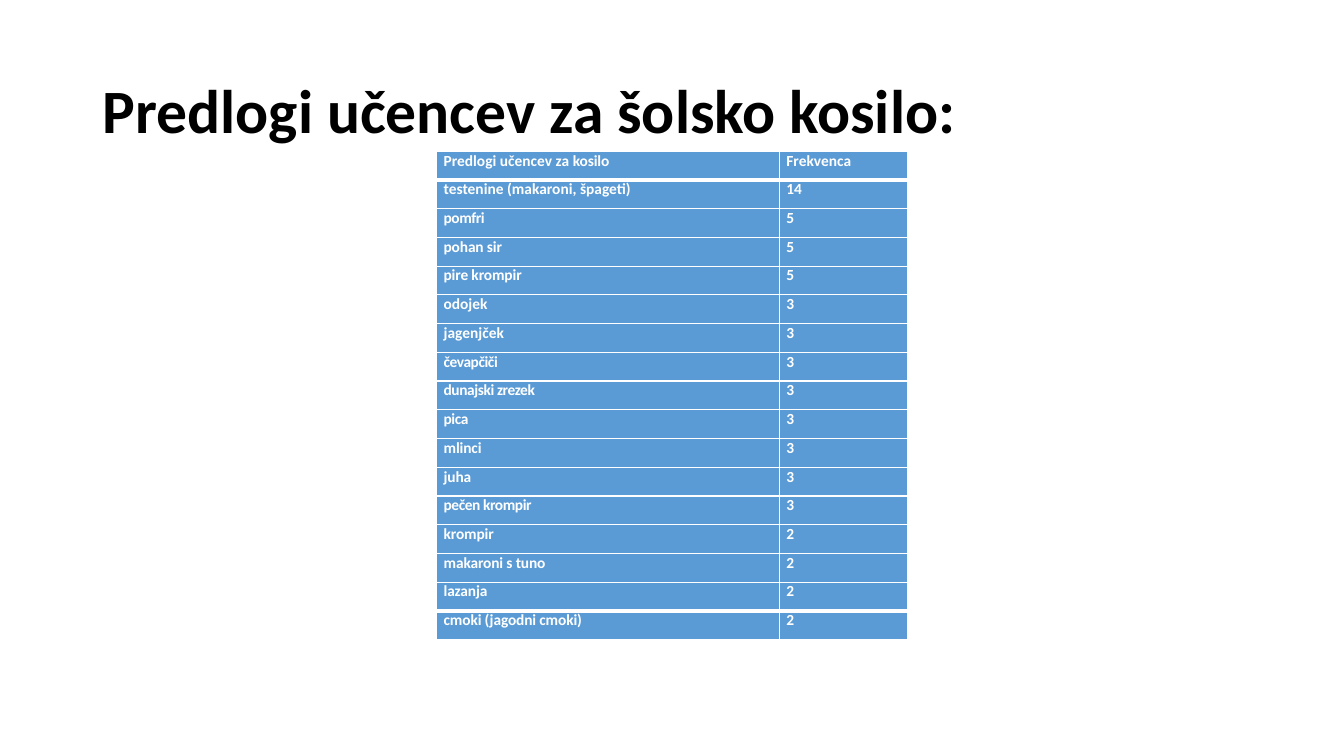
from dataclasses import dataclass

from lxml.etree import fromstring
from pptx import Presentation
from pptx.dml.color import RGBColor
from pptx.enum.text import MSO_ANCHOR
from pptx.util import Inches, Pt


@dataclass(frozen=True)
class Theme:
    font: str = "Calibri"
    title_size: float = 44
    table_size: float = 11
    title_color: str = "000000"
    table_text: str = "FFFFFF"
    cell_fill: str = "5B9BD5"
    rule_color: str = "FFFFFF"
    thin_rule: int = 1
    thick_rule: int = 3


THEME = Theme()
SLIDE_W, SLIDE_H = 13.33, 7.5
TITLE_BOX = (0.92, 0.4, 11.5, 1.45)
TABLE_BOX = (4.33, 1.5, 4.67, 4.85)
DISH_SHARE = 3.4 / 4.67
CELL_INDENT = 0.07

TITLE = "Predlogi učencev za šolsko kosilo:"
# Dish runs as (text, letter spacing in points), then the frequency
SUGGESTIONS = [
    ([("Predlogi učencev za ", 0), ("kosilo", -0.1)], "Frekvenca"),
    ([("testenine (makaroni, špageti)", 0)], "14"),
    ([("pomfri", -0.3)], "5"),
    ([("pohan sir", -0.1)], "5"),
    ([("pire krompir", -0.1)], "5"),
    ([("odojek", 0)], "3"),
    ([("jagenjček", 0)], "3"),
    ([("čevapčiči", -0.3)], "3"),
    ([("dunajski zrezek", -0.3)], "3"),
    ([("pica", -0.3)], "3"),
    ([("mlinci", -0.1)], "3"),
    ([("juha", -0.1)], "3"),
    ([("pečen krompir", -0.3)], "3"),
    ([("krompir", -0.1)], "2"),
    ([("makaroni s tuno", -0.1)], "2"),
    ([("lazanja", -0.1)], "2"),
    ([("cmoki (jagodni cmoki)", -0.1)], "2"),
]
DRAWING_NS = "http://schemas.openxmlformats.org/drawingml/2006/main"


def add_run(paragraph, text, size, color, tracking=0):
    run = paragraph.add_run()
    run.text = text
    run.font.name = THEME.font
    run.font.size = Pt(size)
    run.font.bold = True
    run.font.color.rgb = RGBColor.from_string(color)
    if tracking:
        run.font._element.set("spc", str(round(tracking * 100)))


def set_borders(cell, top, bottom):
    """Draw all four cell edges; the sides are always thin."""
    properties = cell._tc.get_or_add_tcPr()
    widths = {"L": THEME.thin_rule, "R": THEME.thin_rule, "T": top, "B": bottom}
    for index, (side, width) in enumerate(widths.items()):
        properties.insert(index, fromstring(
            f'<a:ln{side} xmlns:a="{DRAWING_NS}" w="{Pt(width)}"><a:solidFill>'
            f'<a:srgbClr val="{THEME.rule_color}"/></a:solidFill></a:ln{side}>'))


def fill_cell(cell, runs):
    cell.margin_left = cell.margin_right = cell.margin_top = cell.margin_bottom = 0
    cell.fill.solid()
    cell.fill.fore_color.rgb = RGBColor.from_string(THEME.cell_fill)
    paragraph = cell.text_frame.paragraphs[0]
    paragraph.space_before = Pt(0.1)
    indent = paragraph._p.get_or_add_pPr()
    indent.set("marL", str(Inches(CELL_INDENT)))
    indent.set("indent", "0")
    for text, tracking in runs:
        add_run(paragraph, text, THEME.table_size, THEME.table_text, tracking)


def add_title(slide, box):
    frame = slide.shapes.add_textbox(*map(Inches, box)).text_frame
    frame.word_wrap = True
    frame.vertical_anchor = MSO_ANCHOR.MIDDLE
    paragraph = frame.paragraphs[0]
    paragraph.line_spacing = 0.9
    add_run(paragraph, TITLE, THEME.title_size, THEME.title_color)


def add_suggestions(slide, box):
    count = len(SUGGESTIONS)
    width, height = box[2:]
    table = slide.shapes.add_table(count, 2, *map(Inches, box)).table
    table.columns[0].width = Inches(width * DISH_SHARE)
    table.columns[1].width = Inches(width * (1 - DISH_SHARE))

    # Thick rules lie below the header and above the last row
    thick_edges = {1, count - 1}
    edges = [THEME.thick_rule if edge in thick_edges else THEME.thin_rule
             for edge in range(count + 1)]
    for row, (dish, frequency) in enumerate(SUGGESTIONS):
        table.rows[row].height = Inches(height / count)
        for column, runs in enumerate((dish, [(frequency, 0)])):
            cell = table.cell(row, column)
            fill_cell(cell, runs)
            set_borders(cell, edges[row], edges[row + 1])


def main():
    presentation = Presentation()
    presentation.slide_width = Inches(SLIDE_W)
    presentation.slide_height = Inches(SLIDE_H)
    slide = presentation.slides.add_slide(presentation.slide_layouts[6])
    add_title(slide, TITLE_BOX)
    add_suggestions(slide, TABLE_BOX)
    presentation.save("out.pptx")


if __name__ == "__main__":
    main()
